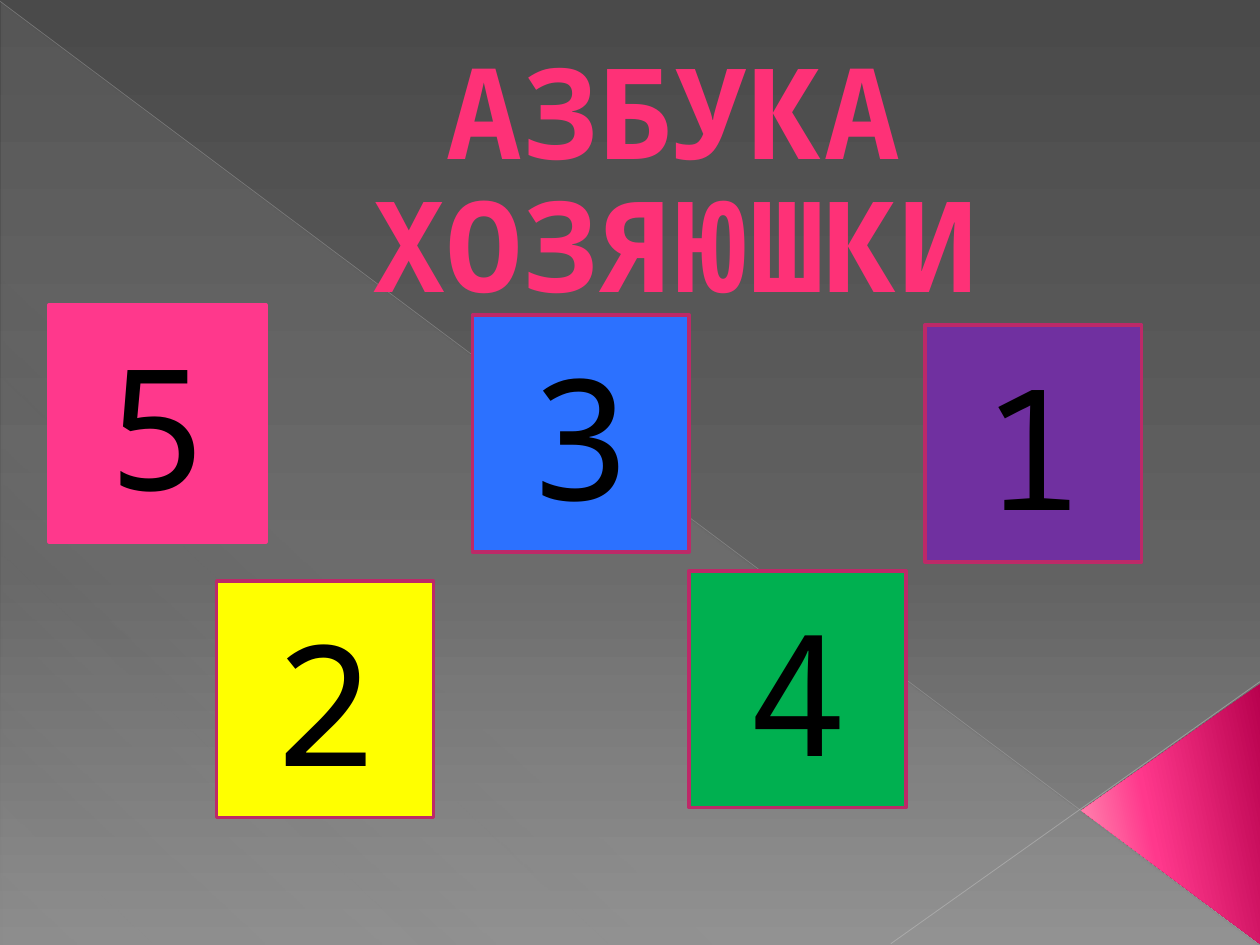
from lxml.etree import SubElement
from pptx import Presentation
from pptx.dml.color import RGBColor
from pptx.enum.shapes import MSO_CONNECTOR as Connector, MSO_SHAPE as Shape
from pptx.enum.text import MSO_ANCHOR as Anchor, PP_ALIGN as Align
from pptx.oxml.ns import qn
from pptx.util import Inches, Pt

FONT = "Noto Sans Mono"
TILE_SIZE = (1.72, 1.88)
EDGE = "BD2968"
TILES = [  # number, left, top, fill, edge
    ("5", 0.39, 2.42, "FF388C", "FF388C"),
    ("2", 1.72, 4.61, "FFFF00", EDGE),
    ("3", 3.75, 2.5, "2C71FF", EDGE),
    ("4", 5.47, 4.53, "00B050", EDGE),
    ("1", 7.34, 2.58, "7030A0", EDGE),
]


def color(hex_string):
    return RGBColor.from_string(hex_string)


def add_alpha(color_element, percent):
    SubElement(color_element, qn("a:alpha"), val=str(percent * 1000))


def set_gradient(fill, owner, stops, angle):
    """Stops are (position, colour) or (position, colour, opacity), in percent."""
    fill.gradient()
    gradient = owner.find(".//" + qn("a:gradFill"))
    for child in list(gradient):
        gradient.remove(child)
    stop_list = SubElement(gradient, qn("a:gsLst"))
    for position, hex_string, *opacity in stops:
        stop = SubElement(stop_list, qn("a:gs"), pos=str(position * 1000))
        stop_color = SubElement(stop, qn("a:srgbClr"), val=hex_string)
        if opacity:
            add_alpha(stop_color, opacity[0])
    SubElement(gradient, qn("a:lin"), ang=str(angle * 60000), scaled="0")


def add_shape(page, kind, left, top, width, height):
    shape = page.shapes.add_shape(
        kind, Inches(left), Inches(top), Inches(width), Inches(height))
    shape.shadow.inherit = False
    return shape


def add_gradient_shape(page, kind, place, stops, angle):
    shape = add_shape(page, kind, *place)
    set_gradient(shape.fill, shape._element.spPr, stops, angle)
    shape.line.fill.background()
    return shape


def add_line(page, start, end, hex_string, width, opacity):
    line = page.shapes.add_connector(
        Connector.STRAIGHT, *(Inches(value) for value in start + end))
    line.line.color.rgb = color(hex_string)
    line.line.width = Pt(width)
    properties = line._element.spPr
    add_alpha(properties.find(".//" + qn("a:srgbClr")), opacity)
    SubElement(properties, qn("a:effectLst"))


def write(frame, text, size, anchor):
    frame.text = text
    frame.word_wrap = True
    frame.vertical_anchor = anchor
    para = frame.paragraphs[0]
    para.alignment = Align.CENTER
    span = para.runs[0]
    span.font.name = FONT
    span.font.size = Pt(size)
    return para, span


def add_title(page, text):
    box = page.shapes.add_textbox(
        Inches(0.67), Inches(0.92), Inches(8.82), Inches(1.61))
    frame = box.text_frame
    frame.margin_bottom = 0
    para, span = write(frame, text, 72, Anchor.BOTTOM)
    para.line_spacing = 0.88
    para._p.get_or_add_pPr().set("marL", str(Inches(0.53)))
    span.font.bold = True
    set_gradient(span.font.fill, span._r, [
        (0, "FF6291"), (49, "FE3177"), (50, "EC1670"),
        (92, "CB1B65"), (100, "C81A63")], 90)


def add_tile(page, number, left, top, fill, edge):
    tile = add_shape(page, Shape.RECTANGLE, left, top, *TILE_SIZE)
    tile.fill.solid()
    tile.fill.fore_color.rgb = color(fill)
    tile.line.color.rgb = color(edge)
    tile.line.width = Pt(2)
    _, span = write(tile.text_frame, number, 96, Anchor.MIDDLE)
    span.font.color.rgb = color("000000")


def add_backdrop(page):
    set_gradient(page.background.fill, page._element, [
        (0, "4A4A4A"), (60, "626262"), (100, "8C8C8C")], 90)
    add_gradient_shape(page, Shape.RIGHT_TRIANGLE, (0.01, 0.02, 9.98, 7.48), [
        (0, "D2D2D2", 10), (70, "D2D2D2", 8), (100, "D2D2D2", 1)], 133)
    add_line(page, (0, 0.01), (9.99, 7.49), "BFBFBF", 0.39, 35)
    add_line(page, (10, 5.41), (7.07, 7.49), "C6C6C6", 0.47, 45)
    corner = add_gradient_shape(
        page, Shape.ISOSCELES_TRIANGLE, (8.26, 5.75, 2.07, 1.42), [
            (0, "B8014E"), (60, "FF388C"), (100, "FF9CB9")], 258)
    corner.adjustments[0] = 0.513
    corner.rotation = 270


def main():
    deck = Presentation()
    deck.slide_width = Inches(10)
    deck.slide_height = Inches(7.5)
    page = deck.slides.add_slide(deck.slide_layouts[6])
    add_backdrop(page)
    add_title(page, "АЗБУКА ХОЗЯЮШКИ")
    for tile in TILES:
        add_tile(page, *tile)
    deck.save("out.pptx")


if __name__ == "__main__":
    main()
